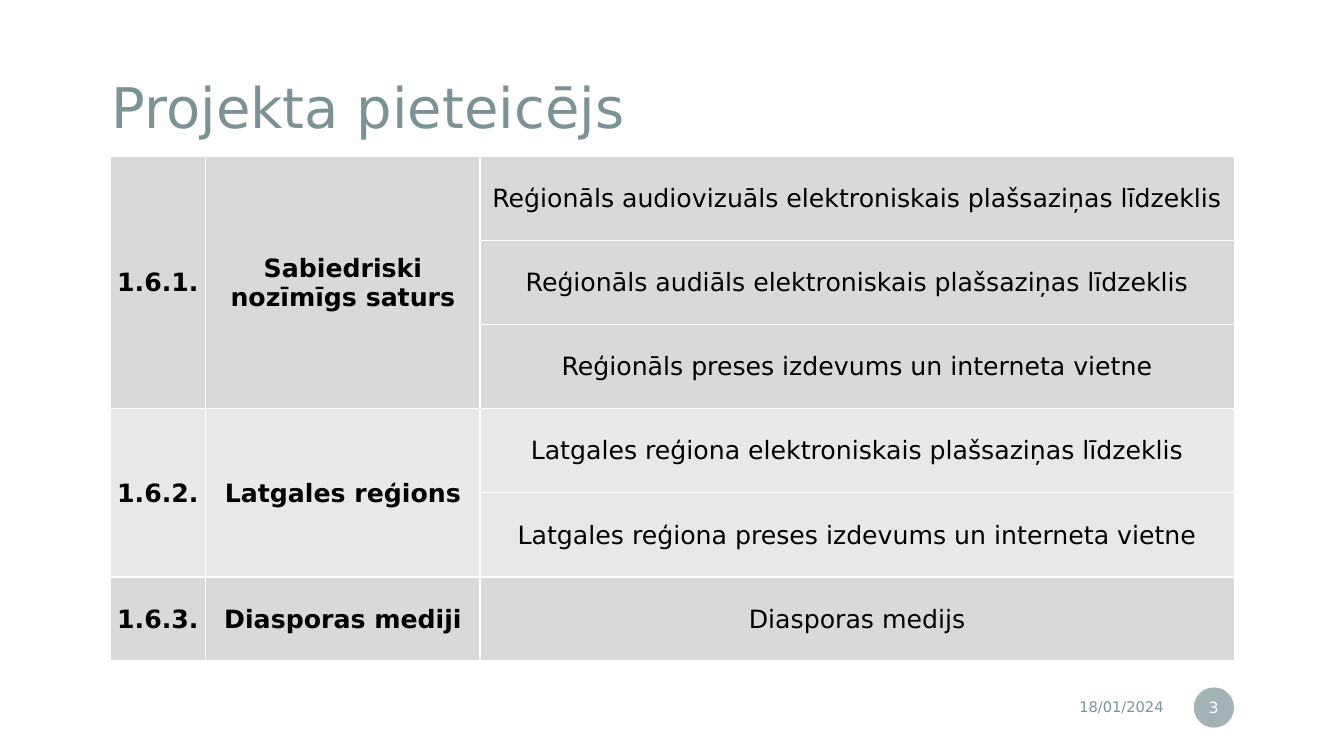
from dataclasses import dataclass

from lxml import etree
from pptx import Presentation
from pptx import util as u
from pptx.dml import color
from pptx.enum import shapes, text
from pptx.oxml import ns

COLORS = {"accent": "7C9396", "dark": "D9D9D9", "light": "E8E8E8",
          "ink": "000000", "white": "FFFFFF"}
FONT = "DejaVu Sans"
WIDTH, HEIGHT = u.Inches(13.33), u.Inches(7.5)
COLUMNS = (7.13, 20.41, 56.11)
ROW = 11.13


@dataclass
class Box:
    left: float
    top: float
    width: float
    height: float

    def emu(self) -> tuple[int, int, int, int]:
        return (across(self.left), down(self.top),
                across(self.width), down(self.height))


@dataclass
class Measure:
    number: str
    name: str
    applicants: list[str]
    fill: str


TITLE = Box(6.83, 6.4, 65.49, 16.4)
DATE = Box(64.74, 91.2, 22.58, 4.67)
BADGE = Box(88.82, 90.93, 3, 5.33)
MEASURES = [
    Measure("1.6.1.", "Sabiedriski nozīmīgs saturs", [
        "Reģionāls audiovizuāls elektroniskais plašsaziņas līdzeklis",
        "Reģionāls audiāls elektroniskais plašsaziņas līdzeklis",
        "Reģionāls preses izdevums un interneta vietne"], "dark"),
    Measure("1.6.2.", "Latgales reģions", [
        "Latgales reģiona elektroniskais plašsaziņas līdzeklis",
        "Latgales reģiona preses izdevums un interneta vietne"], "light"),
    Measure("1.6.3.", "Diasporas mediji", ["Diasporas medijs"], "dark"),
]
ROWS = sum(len(m.applicants) for m in MEASURES)
TABLE = Box(8.18, 20.67, sum(COLUMNS), ROW * ROWS)


def across(percent: float) -> int:
    return round(WIDTH * percent / 100)


def down(percent: float) -> int:
    return round(HEIGHT * percent / 100)


def rgb(name: str) -> color.RGBColor:
    return color.RGBColor.from_string(COLORS[name])


def write(tf, words: str, size: float, ink: str, align, bold: bool = False):
    tf.text = words
    p = tf.paragraphs[0]
    p.alignment = align
    p.font.name, p.font.size, p.font.bold = FONT, u.Pt(size), bold
    p.font.color.rgb = rgb(ink)
    return p


def set_frame(tf, side: float, top: float) -> None:
    tf.word_wrap = True
    tf.auto_size = text.MSO_AUTO_SIZE.NONE
    tf.vertical_anchor = text.MSO_ANCHOR.MIDDLE
    tf.margin_left = tf.margin_right = u.Inches(side)
    tf.margin_top = tf.margin_bottom = u.Inches(top)


def style_cell(cell, fill: str) -> None:
    tcPr = cell._tc.get_or_add_tcPr()
    for side in ("lnL", "lnR", "lnT", "lnB"):
        ln = etree.SubElement(tcPr, ns.qn(f"a:{side}"), w=str(u.Pt(1)))
        solid = etree.SubElement(ln, ns.qn("a:solidFill"))
        etree.SubElement(solid, ns.qn("a:srgbClr"), val=COLORS["white"])
    cell.fill.solid()
    cell.fill.fore_color.rgb = rgb(fill)
    cell.vertical_anchor = text.MSO_ANCHOR.MIDDLE
    cell.margin_left = cell.margin_right = cell.margin_top = u.Inches(0.01)
    cell.margin_bottom = 0


def add_title(s) -> None:
    sp = s.shapes.title
    sp.left, sp.top, sp.width, sp.height = TITLE.emu()
    set_frame(sp.text_frame, 0.2, 0.2)
    p = write(sp.text_frame, "Projekta pieteicējs", 40, "accent", text.PP_ALIGN.LEFT)
    p.line_spacing = 0.9


def add_measures(s) -> None:
    table = s.shapes.add_table(ROWS, len(COLUMNS), *TABLE.emu()).table
    table.first_row = table.horz_banding = False
    for column, width in zip(table.columns, COLUMNS):
        column.width = across(width)
    for row in table.rows:
        row.height = down(ROW)
    first = 0
    for m in MEASURES:
        last = first + len(m.applicants) - 1
        for i, applicant in enumerate(m.applicants, first):
            for j in range(len(COLUMNS)):
                style_cell(table.cell(i, j), m.fill)
            write(table.cell(i, 2).text_frame, applicant, 18, "ink",
                  text.PP_ALIGN.CENTER)
        for j, label in enumerate((m.number, m.name)):
            cell = table.cell(first, j)
            if last > first:
                cell.merge(table.cell(last, j))
            write(cell.text_frame, label, 18, "ink", text.PP_ALIGN.CENTER, True)
        first = last + 1


def add_footer(s) -> None:
    sp = s.shapes.add_textbox(*DATE.emu())
    set_frame(sp.text_frame, 0.1, 0.05)
    write(sp.text_frame, "18/01/2024", 10.5, "accent", text.PP_ALIGN.RIGHT)

    sp = s.shapes.add_shape(shapes.MSO_SHAPE.OVAL, *BADGE.emu())
    sp.shadow.inherit = False
    sp.fill.solid()
    sp.fill.fore_color.rgb = rgb("accent")
    clr = sp._element.spPr.find(f".//{ns.qn('a:srgbClr')}")
    etree.SubElement(clr, ns.qn("a:alpha"), val="70000")
    sp.line.fill.background()
    set_frame(sp.text_frame, 0.02, 0.05)
    write(sp.text_frame, "3", 11, "white", text.PP_ALIGN.CENTER)


def main() -> None:
    prs = Presentation()
    prs.slide_width, prs.slide_height = WIDTH, HEIGHT
    s = prs.slides.add_slide(prs.slide_layouts.get_by_name("Title Only"))
    add_title(s)
    add_footer(s)
    add_measures(s)
    prs.save("out.pptx")


if __name__ == "__main__":
    main()
